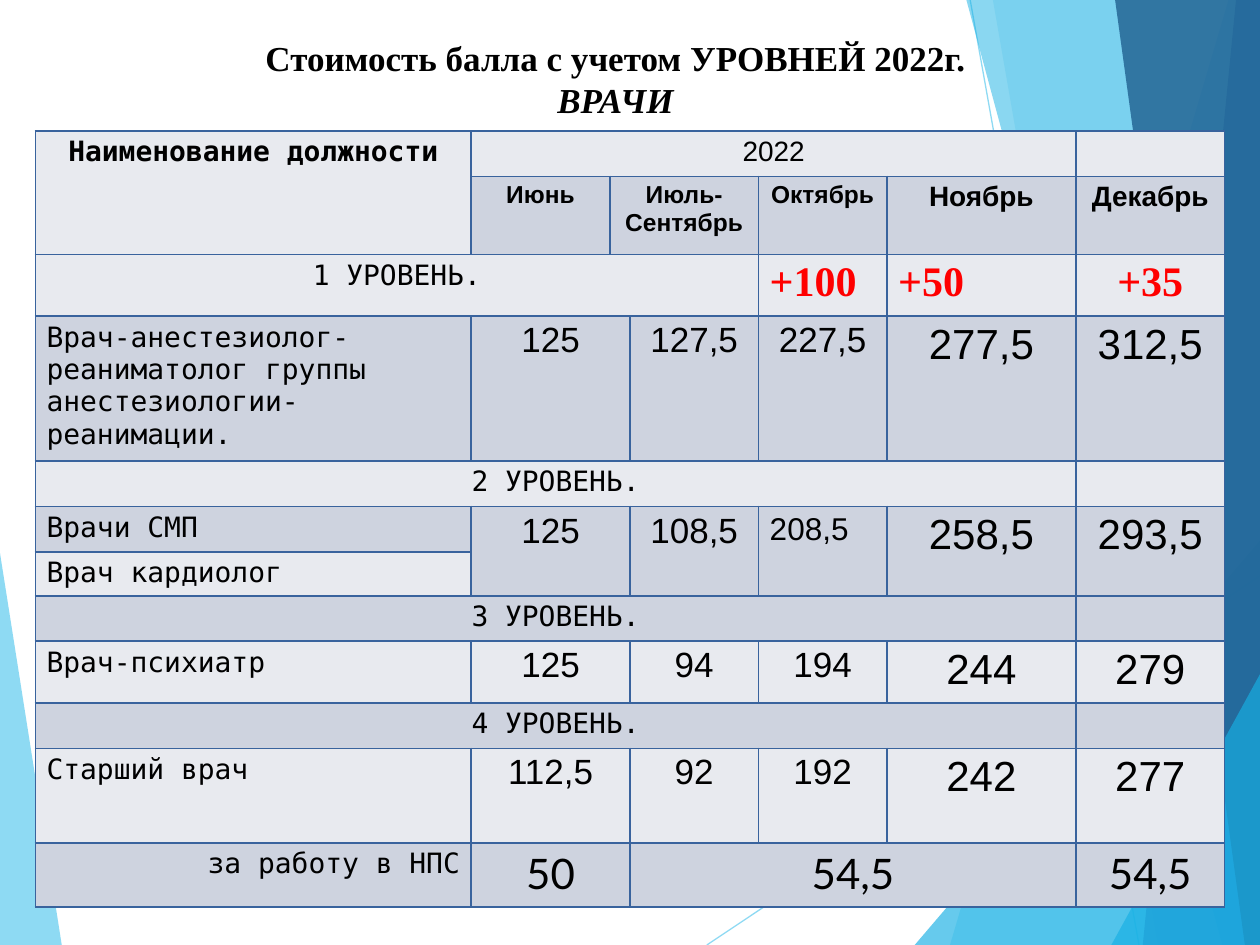
from lxml import etree
from pptx import Presentation
from pptx import util as u
from pptx.dml.color import RGBColor
from pptx.enum import shapes, text
from pptx.oxml.ns import qn

MONO, SANS, SERIF = "DejaVu Sans Mono", "Arial", "Times New Roman"
LEFT, CENTER, RIGHT = text.PP_ALIGN.LEFT, text.PP_ALIGN.CENTER, text.PP_ALIGN.RIGHT
BLACK, RED, BORDER = "000000", "FF0000", "39639D"
BANDS = ("E8EAEF", "CED3DF")

# Style: font, size, bold, colour, alignment
STYLES = {
    "head": (MONO, 16, True, BLACK, CENTER),
    "year": (SANS, 16, False, BLACK, CENTER),
    "month": (SANS, 14, True, BLACK, CENTER),
    "late month": (SANS, 16, True, BLACK, CENTER),
    "level": (MONO, 16, False, BLACK, CENTER),
    "job": (MONO, 16, False, BLACK, LEFT),
    "note": (MONO, 16, False, BLACK, RIGHT),
    "rise": (SERIF, 24, True, RED, LEFT),
    "last rise": (SERIF, 24, True, RED, CENTER),
    "value": (SANS, 20, False, BLACK, CENTER),
    "left value": (SANS, 18, False, BLACK, LEFT),
    "big value": (SANS, 24, False, BLACK, CENTER),
    "extra": ("Lato", 24, False, BLACK, CENTER),
}

COLS = (3.46, 1.1, 0.16, 1.02, 1.02, 1.5, 1.18)
ROWS = (0.36, 0.62, 0.49, 1.15, 0.36, 0.36, 0.35, 0.35, 0.49, 0.35, 0.75, 0.51)

# Cell: row, column, text, style, rows spanned, columns spanned
CELLS = [
    (0, 0, "Наименование должности", "head", 2, 1),
    (0, 1, "2022", "year", 1, 5),
    (1, 1, "Июнь", "month", 1, 1),
    (1, 2, "Июль-Сентябрь", "month", 1, 2),
    (1, 4, "Октябрь", "month", 1, 1),
    (1, 5, "Ноябрь", "late month", 1, 1),
    (1, 6, "Декабрь", "late month", 1, 1),
    (2, 0, "1 УРОВЕНЬ.", "level", 1, 4),
    (2, 4, "+100", "rise", 1, 1),
    (2, 5, "+50", "rise", 1, 1),
    (2, 6, "+35", "last rise", 1, 1),
    (6, 0, "Врач кардиолог", "job", 1, 1),
    (11, 0, "за работу в НПС", "note", 1, 1),
    (11, 1, "50", "extra", 1, 2),
    (11, 3, "54,5", "extra", 1, 3),
    (11, 6, "54,5", "extra", 1, 1),
]
LEVELS = {4: "2 УРОВЕНЬ.", 7: "3 УРОВЕНЬ.", 9: "4 УРОВЕНЬ."}

# Row, rows spanned by the values, job, values by month
JOBS = [
    (3, 1, "Врач-анестезиолог-реаниматолог группы анестезиологии-реанимации.",
     ("125", "127,5", "227,5", "277,5", "312,5")),
    (5, 2, "Врачи СМП", ("125", "108,5", "208,5", "258,5", "293,5")),
    (8, 1, "Врач-психиатр", ("125", "94", "194", "244", "279")),
    (10, 1, "Старший врач", ("112,5", "92", "192", "242", "277")),
]

# Facets: fill, opacity in percent, corner points
FACETS = [
    ("5FCBEF", 36, [(9.75, 0), (7.54, 7.5), (10, 7.5), (10, 0)]),
    ("5FCBEF", 20, [(7.88, 0), (9.19, 7.5), (10, 7.5), (10, 0)]),
    ("17B0E4", 66, [(7.26, 7.5), (10, 4.29), (10, 7.5)]),
    ("17B0E4", 50, [(7.67, 0), (9.7, 7.5), (10, 7.5), (10, 0)]),
    ("2E83C3", 70, [(9.81, 0), (9.07, 7.5), (10, 7.5), (10, 0)]),
    ("226292", 82, [(8.85, 0), (9.88, 7.5), (10, 7.5), (10, 0)]),
    ("17B0E4", 66, [(8.82, 7.5), (10, 5.35), (10, 7.5)]),
]


def rgb(value):
    return RGBColor.from_string(value)


def set_opacity(sp, percent):
    for clr in sp._element.spPr.iter(qn("a:srgbClr")):
        etree.SubElement(clr, qn("a:alpha"), val=str(percent * 1000))


def add_facet(s, color, opacity, points):
    pts = [(u.Inches(x), u.Inches(y)) for x, y in points]
    fb = s.shapes.build_freeform(*pts[0])
    fb.add_line_segments(pts[1:], close=True)
    sp = fb.convert_to_shape()
    sp.shadow.inherit = False
    sp.fill.solid()
    sp.fill.fore_color.rgb = rgb(color)
    sp.line.fill.background()
    set_opacity(sp, opacity)


def add_ray(s, *ends):
    ray = s.shapes.add_connector(shapes.MSO_CONNECTOR.STRAIGHT, *map(u.Inches, ends))
    ray.line.color.rgb = rgb("5FCBEF")
    ray.line.width = u.Pt(0.75)
    set_opacity(ray, 70)
    etree.SubElement(ray._element.spPr, qn("a:effectLst"))


def write(p, words, font, size, bold, color, align, italic=False):
    p.alignment = align
    r = p.add_run()
    r.text = words
    f = r.font
    f.name, f.size, f.bold, f.italic = font, u.Pt(size), bold, italic
    f.color.rgb = rgb(color)


def set_title(s):
    title = s.shapes.title
    title.left, title.top, title.width, title.height = map(u.Inches, (0.83, 0.24, 8.11, 0.77))
    s.shapes._spTree.append(title._element)  # in front of the facets
    tf = title.text_frame
    tf.word_wrap = True
    tf.auto_size = text.MSO_AUTO_SIZE.NONE
    tf.vertical_anchor = text.MSO_ANCHOR.TOP
    write(tf.paragraphs[0], "Стоимость балла с учетом УРОВНЕЙ 2022г.",
          SERIF, 20, True, BLACK, CENTER)
    write(tf.add_paragraph(), "ВРАЧИ", SERIF, 20, True, BLACK, CENTER, italic=True)


def format_cell(cell, fill):
    tc_pr = cell._tc.get_or_add_tcPr()
    for side in ("a:lnL", "a:lnR", "a:lnT", "a:lnB"):
        ln = etree.SubElement(tc_pr, qn(side), w=str(u.Pt(1)))
        solid = etree.SubElement(ln, qn("a:solidFill"))
        etree.SubElement(solid, qn("a:srgbClr"), val=BORDER)
    cell.fill.solid()
    cell.fill.fore_color.rgb = rgb(fill)
    cell.margin_left = cell.margin_right = u.Inches(0.09)
    cell.margin_top = cell.margin_bottom = u.Inches(0.04)


def table_cells():
    cells = list(CELLS) + [(0, 6, "", "year", 1, 1)]
    for row, words in LEVELS.items():
        cells += [(row, 0, words, "level", 1, 6), (row, 6, "", "level", 1, 1)]
    for row, rows, job, values in JOBS:
        cells.append((row, 0, job, "job", 1, 1))
        october = "left value" if rows == 2 else "value"
        names = ("value", "value", october, "big value", "big value")
        for col, words, style in zip((1, 3, 4, 5, 6), values, names):
            cells.append((row, col, words, style, rows, 2 if col == 1 else 1))
    return cells


def add_rate_table(s):
    frame = s.shapes.add_table(len(ROWS), len(COLS), u.Inches(0.28), u.Inches(1.04),
                               u.Inches(sum(COLS)), u.Inches(sum(ROWS)))
    table = frame.table
    for col, width in zip(table.columns, COLS):
        col.width = u.Inches(width)
    for i, (row, height) in enumerate(zip(table.rows, ROWS)):
        row.height = u.Inches(height)
        for cell in row.cells:
            format_cell(cell, BANDS[i % 2])
    for row, col, words, style, rows, cols in table_cells():
        cell = table.cell(row, col)
        if rows * cols > 1:
            cell.merge(table.cell(row + rows - 1, col + cols - 1))
        write(cell.text_frame.paragraphs[0], words, *STYLES[style])


def main():
    prs = Presentation()
    prs.slide_width, prs.slide_height = u.Inches(10), u.Inches(7.5)
    s = prs.slides.add_slide(prs.slide_layouts[5])
    # Background facets and rays
    add_facet(s, "5FCBEF", 70, [(0, 4.39), (0.49, 7.5), (0, 7.5)])
    add_ray(s, 5.61, 7.5, 10, 4.57)
    add_ray(s, 7.7, 0, 9.04, 7.5)
    for facet in FACETS:
        add_facet(s, *facet)
    # Content
    set_title(s)
    add_rate_table(s)
    prs.save("out.pptx")


if __name__ == "__main__":
    main()
